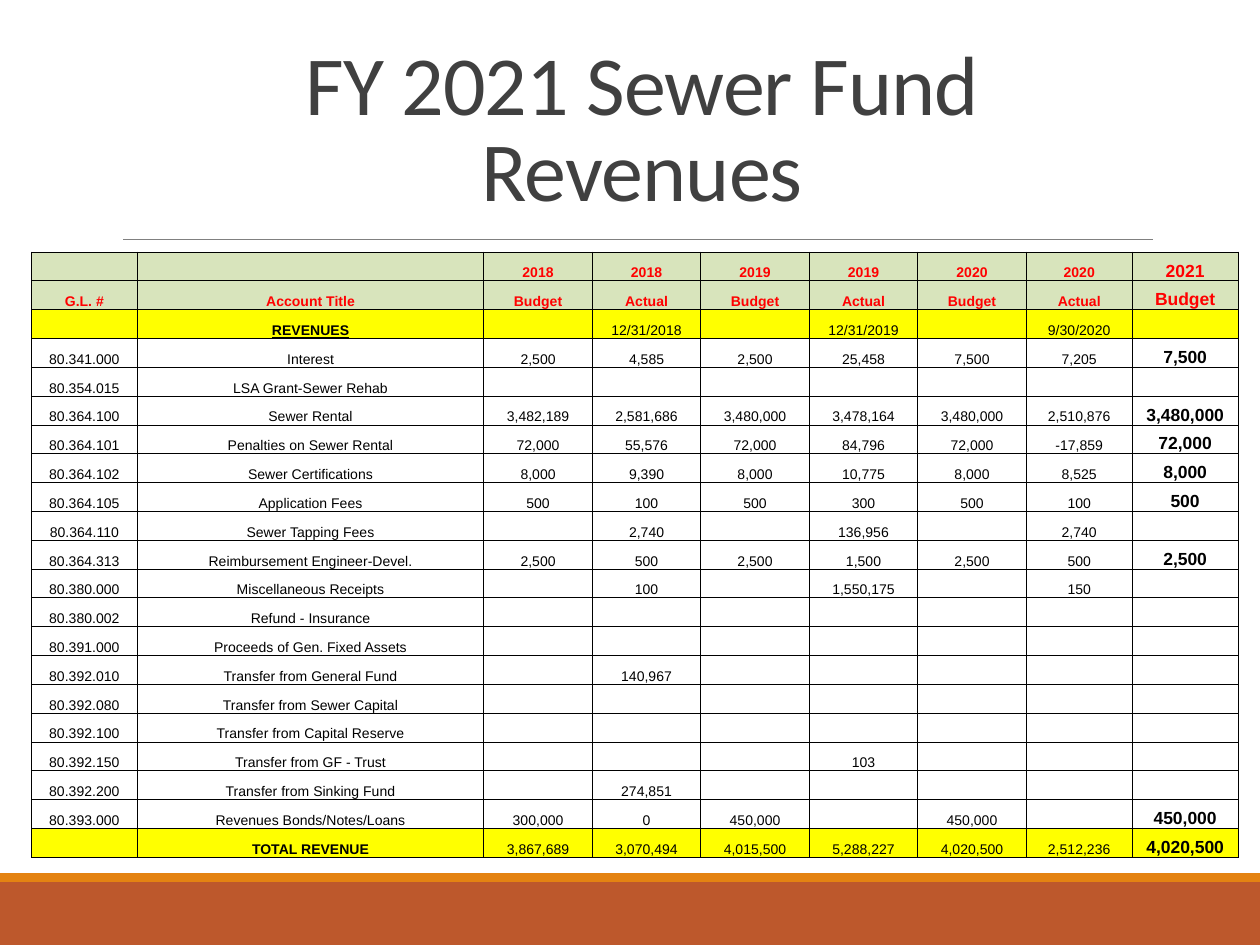
from lxml import etree
from pptx import Presentation
from pptx import util as u
from pptx.dml.color import RGBColor
from pptx.enum import shapes, text
from pptx.oxml import ns

TITLE = "FY 2021 Sewer Fund\vRevenues"
HEADINGS = [
    ("", "", "2018", "2018", "2019", "2019", "2020", "2020", "2021"),
    ("G.L. #", "Account Title", "Budget", "Actual", "Budget", "Actual", "Budget", "Actual", "Budget"),
]
SECTION = ("", "REVENUES", "", "12/31/2018", "", "12/31/2019", "", "9/30/2020", "")
ACCOUNTS = [
    ("80.341.000", "Interest", "2,500", "4,585", "2,500", "25,458", "7,500", "7,205", "7,500"),
    ("80.354.015", "LSA Grant-Sewer Rehab", "", "", "", "", "", "", ""),
    ("80.364.100", "Sewer Rental", "3,482,189", "2,581,686", "3,480,000", "3,478,164",
     "3,480,000", "2,510,876", "3,480,000"),
    ("80.364.101", "Penalties on Sewer Rental", "72,000", "55,576", "72,000", "84,796",
     "72,000", "-17,859", "72,000"),
    ("80.364.102", "Sewer Certifications", "8,000", "9,390", "8,000", "10,775", "8,000", "8,525", "8,000"),
    ("80.364.105", "Application Fees", "500", "100", "500", "300", "500", "100", "500"),
    ("80.364.110", "Sewer Tapping Fees", "", "2,740", "", "136,956", "", "2,740", ""),
    ("80.364.313", "Reimbursement Engineer-Devel.", "2,500", "500", "2,500", "1,500", "2,500", "500", "2,500"),
    ("80.380.000", "Miscellaneous Receipts", "", "100", "", "1,550,175", "", "150", ""),
    ("80.380.002", "Refund - Insurance", "", "", "", "", "", "", ""),
    ("80.391.000", "Proceeds of Gen. Fixed Assets", "", "", "", "", "", "", ""),
    ("80.392.010", "Transfer from General Fund", "", "140,967", "", "", "", "", ""),
    ("80.392.080", "Transfer from Sewer Capital", "", "", "", "", "", "", ""),
    ("80.392.100", "Transfer from Capital Reserve", "", "", "", "", "", "", ""),
    ("80.392.150", "Transfer from GF - Trust", "", "", "", "103", "", "", ""),
    ("80.392.200", "Transfer from Sinking Fund", "", "274,851", "", "", "", "", ""),
    ("80.393.000", "Revenues Bonds/Notes/Loans", "300,000", "0", "450,000", "", "450,000", "", "450,000"),
]
TOTAL = ("", "TOTAL REVENUE", "3,867,689", "3,070,494", "4,015,500", "5,288,227",
         "4,020,500", "2,512,236", "4,020,500")
COLORS = {
    "title": "404040", "rule": "808080", "footer": "BD582C", "stripe": "E48312",
    "heading_fill": "D8E4BC", "heading": "FF0000", "band": "FFFF00",
    "body_fill": "FFFFFF", "body": "000000", "border": "000000",
}
WIDTHS = [60.5, 198] + [62] * 5 + [60.5] * 2
ROW_HEIGHT = 16.49
TITLE_COL, BUDGET_COL = 1, 8


def color(name):
    return RGBColor.from_string(COLORS[name])


def add_bar(slide, top, height, fill):
    bar = slide.shapes.add_shape(shapes.MSO_SHAPE.RECTANGLE, 0, u.Pt(top), u.Pt(720), u.Pt(height))
    bar.shadow.inherit = False
    bar.fill.solid()
    bar.fill.fore_color.rgb = color(fill)
    bar.line.fill.background()


def add_rule(slide):
    rule = slide.shapes.add_connector(
        shapes.MSO_CONNECTOR.STRAIGHT, u.Pt(70.5), u.Pt(136.8), u.Pt(659), u.Pt(136.8))
    rule.line.color.rgb = color("rule")
    rule.line.width = u.Pt(0.5)
    etree.SubElement(rule._element.spPr, ns.qn("a:effectLst"))


def add_title(slide):
    frame = slide.shapes.add_textbox(u.Pt(70), u.Pt(1.5), u.Pt(594), u.Pt(126.7)).text_frame
    frame.word_wrap = True
    frame.vertical_anchor = text.MSO_ANCHOR.BOTTOM
    heading = frame.paragraphs[0]
    heading.text = TITLE
    heading.alignment = text.PP_ALIGN.CENTER
    heading.line_spacing = 0.85
    heading.font.name = "Calibri"
    heading.font.size = u.Pt(48)
    heading.font.color.rgb = color("title")
    for run in heading.runs:
        run._r.get_or_add_rPr().set("spc", "-50")


def add_borders(cell):
    props = cell._tc.get_or_add_tcPr()
    for side in ("lnL", "lnR", "lnT", "lnB"):
        line = etree.SubElement(props, ns.qn(f"a:{side}"), w=str(u.Pt(0.5)))
        fill = etree.SubElement(line, ns.qn("a:solidFill"))
        etree.SubElement(fill, ns.qn("a:srgbClr"), val=COLORS["border"])


def fill_cell(cell, words, fill, ink, size, bold, underline):
    add_borders(cell)
    cell.fill.solid()
    cell.fill.fore_color.rgb = color(fill)
    cell.margin_left = cell.margin_right = cell.margin_top = u.Pt(0.7)
    cell.margin_bottom = 0
    cell.vertical_anchor = text.MSO_ANCHOR.BOTTOM
    entry = cell.text_frame.paragraphs[0]
    entry.text = words
    entry.alignment = text.PP_ALIGN.CENTER
    entry.font.name = "Arial"
    entry.font.size = u.Pt(size)
    entry.font.bold = bold
    entry.font.underline = underline
    entry.font.color.rgb = color(ink)


def add_budget(slide):
    rows = HEADINGS + [SECTION] + ACCOUNTS + [TOTAL]
    table = slide.shapes.add_table(
        len(rows), len(WIDTHS), u.Pt(18), u.Pt(144),
        u.Pt(sum(WIDTHS)), u.Pt(ROW_HEIGHT * len(rows))).table
    for column, width in zip(table.columns, WIDTHS):
        column.width = u.Pt(width)
    for r, row in enumerate(rows):
        table.rows[r].height = u.Pt(ROW_HEIGHT)
        is_heading, is_band = row in HEADINGS, row in (SECTION, TOTAL)
        fill = "heading_fill" if is_heading else "band" if is_band else "body_fill"
        for c, words in enumerate(row):
            bold = is_heading or c == BUDGET_COL or (is_band and c == TITLE_COL)
            fill_cell(table.cell(r, c), words, fill, "heading" if is_heading else "body",
                      10 if c == BUDGET_COL and words else 8, bold,
                      row is SECTION and c == TITLE_COL)


def main():
    deck = Presentation()
    deck.slide_width, deck.slide_height = u.Pt(720), u.Pt(540)
    slide = deck.slides.add_slide(deck.slide_layouts[6])
    add_bar(slide, 504, 36, "footer")
    add_bar(slide, 499, 5, "stripe")
    add_rule(slide)
    add_title(slide)
    add_budget(slide)
    deck.save("out.pptx")


if __name__ == "__main__":
    main()
